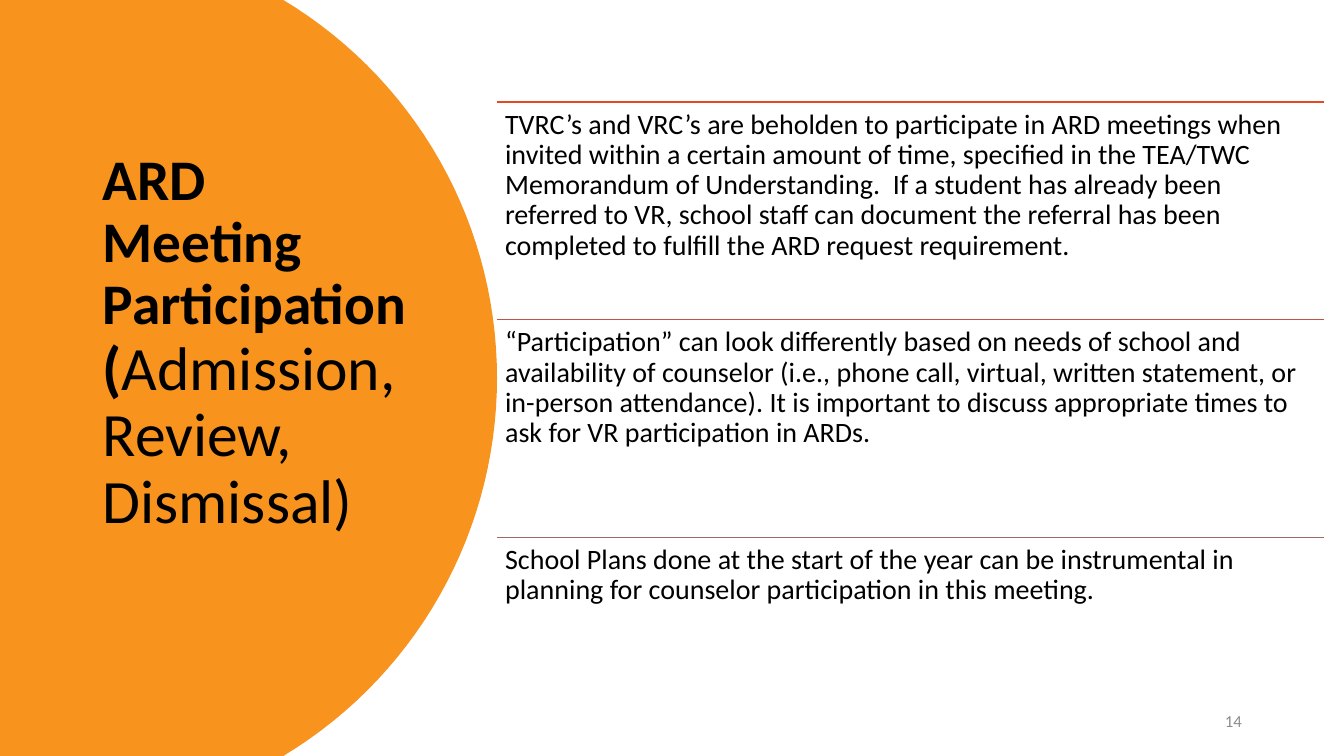
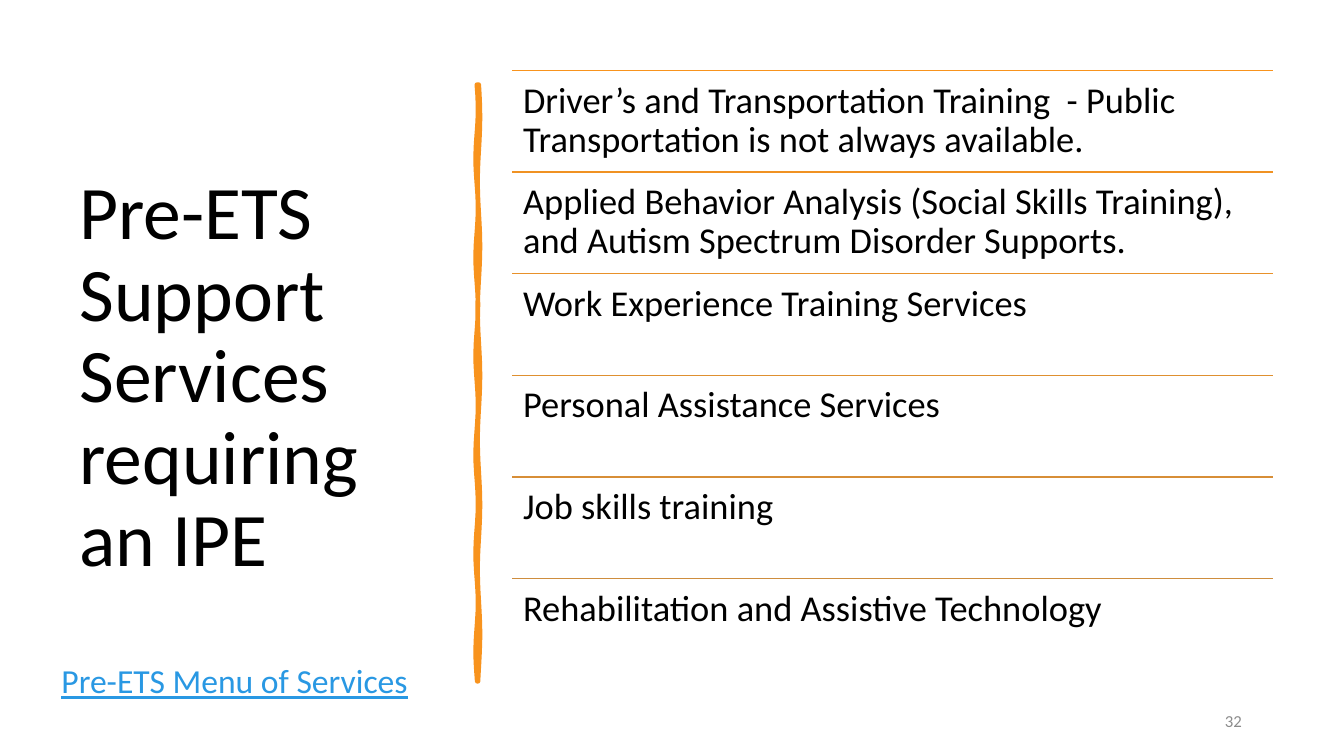
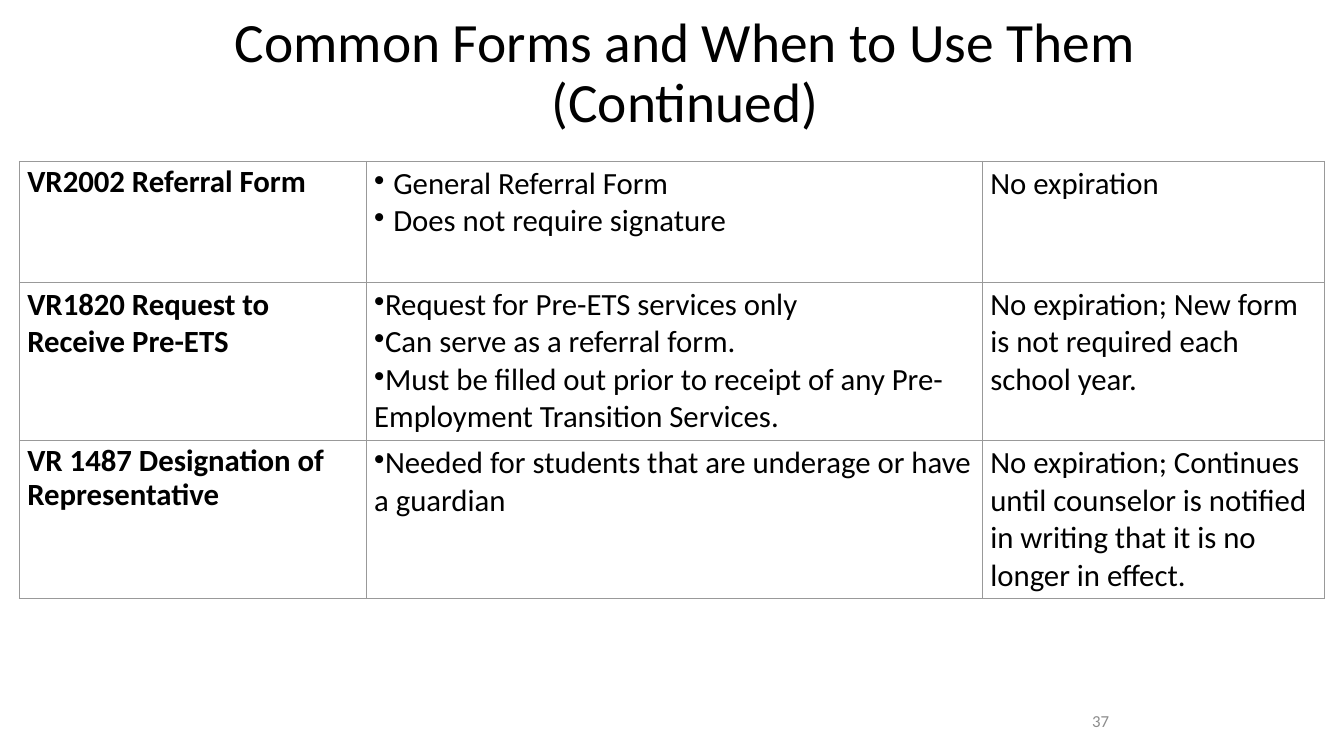
from dataclasses import dataclass
from math import asin, cos, sin

from lxml.etree import SubElement
from pptx import Presentation
from pptx.dml.color import RGBColor
from pptx.enum.shapes import MSO_CONNECTOR as Connector
from pptx.enum.text import MSO_ANCHOR as Anchor, PP_ALIGN as Align
from pptx.oxml import parse_xml
from pptx.oxml.ns import nsdecls, qn
from pptx.util import Inches, Pt

# Shared look
FONT = "Calibri"
BLACK, ORANGE, LINK_BLUE = "000000", "F8931D", "2998E3"
NUMBER_GREY, BORDER_GREY = "8C8C8C", "999999"
SLIDE_WIDTH, SLIDE_HEIGHT = Inches(13.33), Inches(7.5)


@dataclass
class Box:
    """A region, in percent of the slide's width and height."""
    left: float
    top: float
    width: float
    height: float

    def emu(self):
        return (round(SLIDE_WIDTH * self.left / 100), round(SLIDE_HEIGHT * self.top / 100),
                round(SLIDE_WIDTH * self.width / 100), round(SLIDE_HEIGHT * self.height / 100))

    def row(self, index, count):
        height = self.height / count
        return Box(self.left, self.top + index * height, self.width, height)


NUMBER_BOX = Box(70.65, 92.67, 22.5, 5.33)


def color(value):
    return RGBColor.from_string(value)


def style_run(run, size, fill=BLACK, bold=False):
    run.font.name = FONT
    run.font.size = Pt(size)
    run.font.bold = bold
    run.font.color.rgb = color(fill)


def add_text(slide, box, text, size, fill=BLACK, align=Align.LEFT,
             anchor=Anchor.TOP, spacing=1.0, inset=None):
    frame = slide.shapes.add_textbox(*box.emu()).text_frame
    frame.word_wrap = True
    frame.vertical_anchor = anchor
    if inset is not None:
        frame.margin_left = frame.margin_right = Inches(inset)
        frame.margin_top = frame.margin_bottom = Inches(inset)
    paragraph = frame.paragraphs[0]
    paragraph.text = text
    paragraph.alignment = align
    paragraph.line_spacing = spacing
    for run in paragraph.runs:
        style_run(run, size, fill)
    return paragraph


def add_title(slide, box, text, size, align=Align.LEFT):
    return add_text(slide, box, text, size, align=align, anchor=Anchor.MIDDLE, spacing=0.9)


def add_number(slide, number, align=Align.RIGHT):
    add_text(slide, NUMBER_BOX, number, 12, NUMBER_GREY, align, Anchor.MIDDLE)


def add_outline(slide, points, line_width=None):
    points = [(round(x), round(y)) for x, y in points]
    builder = slide.shapes.build_freeform(*points[0])
    builder.add_line_segments(points[1:], close=True)
    shape = builder.convert_to_shape()
    shape.shadow.inherit = False
    shape.fill.solid()
    shape.fill.fore_color.rgb = color(ORANGE)
    if line_width:
        shape.line.color.rgb = color(ORANGE)
        shape.line.width = Pt(line_width)
    else:
        shape.line.fill.background()


def add_round_panel(slide, box, bulge_share=0.43, steps=60):
    """Panel whose right side is an arc of a circle."""
    left, top, width, height = box.emu()
    half, bulge = height / 2, width * bulge_share
    radius = (half ** 2 + bulge ** 2) / (2 * bulge)
    center_x, center_y = left + width - radius, top + half
    reach = asin(half / radius)
    angles = [reach * (2 * step / steps - 1) for step in range(steps + 1)]
    arc = [(center_x + radius * cos(angle), center_y + radius * sin(angle)) for angle in angles]
    add_outline(slide, [(left, top), *arc, (left, top + height)])


def add_brush_stroke(slide, box, steps=60):
    """Upright stroke with slightly uneven sides."""
    left, top, width, height = box.emu()

    def side(x, waves):
        return [(x + width * 0.6 * sin(waves * step / steps), top + height * step / steps)
                for step in range(steps + 1)]

    add_outline(slide, side(left, 38) + side(left + width, 29)[::-1], 3.25)


def add_ruled_list(slide, box, items, size, inset):
    """Equal rows, each a coloured rule with text below it."""
    for index, (rule_color, text) in enumerate(items):
        row = box.row(index, len(items))
        left, top, width, _ = row.emu()
        rule = slide.shapes.add_connector(Connector.STRAIGHT, left, top, left + width, top)
        rule.line.color.rgb = color(rule_color)
        rule.line.width = Pt(1)
        SubElement(rule._element.spPr, qn("a:effectLst"))
        add_text(slide, row, text, size, spacing=0.9, inset=inset)


def set_borders(cell):
    properties = cell._tc.get_or_add_tcPr()
    for index, side in enumerate(("lnL", "lnR", "lnT", "lnB")):
        properties.insert(index, parse_xml(
            f'<a:{side} {nsdecls("a")} w="9525"><a:solidFill>'
            f'<a:srgbClr val="{BORDER_GREY}"/></a:solidFill></a:{side}>'))


def set_bullet(paragraph, indent):
    properties = paragraph._p.get_or_add_pPr()
    properties.set("marL", str(Inches(indent)))
    properties.set("indent", str(-Inches(indent)))
    SubElement(properties, qn("a:buChar")).set("char", "•")


def fill_cell(cell, text, bold=False, tight=False, bullet_indent=None):
    cell.fill.background()
    set_borders(cell)
    cell.margin_left = cell.margin_right = Inches(0.08)
    cell.margin_top = cell.margin_bottom = Inches(0.04)
    cell.text_frame.text = text
    for paragraph in cell.text_frame.paragraphs:
        if tight:
            paragraph.line_spacing = 0.9
            paragraph.space_before = Pt(10)
        if bullet_indent is not None:
            set_bullet(paragraph, bullet_indent)
        for run in paragraph.runs:
            style_run(run, 22, bold=bold)


def add_forms_table(slide, box, forms, column_shares, row_shares):
    left, top, width, height = box.emu()
    table = slide.shapes.add_table(len(forms), len(column_shares), left, top, width, height).table
    table.first_row = table.horz_banding = False
    for column, share in zip(table.columns, column_shares):
        column.width = round(width * share / sum(column_shares))
    for row, share in zip(table.rows, row_shares):
        row.height = round(height * share / sum(row_shares))
    for row, (name, tight, indent, uses, expiry) in zip(table.rows, forms):
        name_cell, uses_cell, expiry_cell = row.cells
        fill_cell(name_cell, name, bold=True, tight=tight)
        fill_cell(uses_cell, "\n".join(uses), bullet_indent=indent)
        fill_cell(expiry_cell, expiry)


def build_meeting_slide(slide):
    add_round_panel(slide, Box(0, 0, 36.98, 100))
    # Bold name, then the long form in regular weight
    title = add_title(slide, Box(6.9, 9.33, 24.23, 72.27),
                      "ARD Meeting Participation\v(", 44)
    for run in title.runs:
        run.font.bold = True
    title.runs[0].font.size = Pt(41)
    long_form = title.add_run()
    long_form.text = "Admission, Review, Dismissal)"
    style_run(long_form, 44)
    add_number(slide, "14")
    add_ruled_list(slide, Box(36.98, 13.47, 61.5, 86.4), [
        ("E64823", "TVRC’s and VRC’s are beholden to participate in ARD meetings when invited "
                   "within a certain amount of time, specified in the TEA/TWC Memorandum of "
                   "Understanding.  If a student has already been referred to VR, school staff "
                   "can document the referral has been completed to fulfill the ARD request "
                   "requirement."),
        ("C15246", "“Participation” can look differently based on needs of school and "
                   "availability of counselor (i.e., phone call, virtual, written statement, or "
                   "in-person attendance). It is important to discuss appropriate times to ask "
                   "for VR participation in ARDs."),
        ("9C6A6A", "School Plans done at the start of the year can be instrumental in planning "
                   "for counselor participation in this meeting."),
    ], 20, 0.08)


def build_services_slide(slide):
    add_title(slide, Box(5.18, 9.33, 28.05, 81.47),
              "Pre-ETS Support Services requiring an IPE", 54)
    add_brush_stroke(slide, Box(35.48, 11.2, 0.15, 78.93))
    add_ruled_list(slide, Box(38.1, 9.33, 56.63, 80.67), [
        (ORANGE, "Driver’s and Transportation Training  - Public Transportation is not always "
                 "available."),
        ("F09223", "Applied Behavior Analysis (Social Skills Training), and Autism Spectrum "
                   "Disorder Supports."),
        ("E8912A", "Work Experience Training Services"),
        ("DF9030", "Personal Assistance Services"),
        ("D78E37", "Job skills training"),
        ("CE8D3E", "Rehabilitation and Assistive Technology"),
    ], 26, 0.11)
    menu = add_text(slide, Box(3.83, 86.67, 29.48, 6.67),
                    "Pre-ETS Menu of Services", 24, LINK_BLUE)
    menu.runs[0].font.underline = True
    add_number(slide, "32")


def build_forms_slide(slide):
    add_title(slide, Box(1.95, 4.27, 98.05, 11.2),
              "Common Forms and When to Use Them\v(Continued)", 39.6, Align.CENTER)
    add_number(slide, "37", Align.CENTER)
    # Name, tight spacing, bullet indent, uses, expiry
    add_forms_table(slide, Box(1.43, 21.33, 97.1, 57.9), [
        ("VR2002 Referral Form", True, 0.19,
         ["General Referral Form", "Does not require signature"],
         "No expiration"),
        ("VR1820 Request to Receive Pre-ETS", False, 0,
         ["Request for Pre-ETS services only", "Can serve as a referral form.",
          "Must be filled out prior to receipt of any Pre-Employment Transition Services."],
         "No expiration; New form is not required each school year."),
        ("VR 1487 Designation of Representative", True, 0,
         ["Needed for students that are underage or have a guardian"],
         "No expiration; Continues until counselor is notified in writing that it is no "
         "longer in effect."),
    ], (3.44, 6.11, 3.39), (1.2, 1.57, 1.57))


def main():
    presentation = Presentation()
    presentation.slide_width, presentation.slide_height = SLIDE_WIDTH, SLIDE_HEIGHT
    blank = presentation.slide_layouts[6]
    for build in (build_meeting_slide, build_services_slide, build_forms_slide):
        build(presentation.slides.add_slide(blank))
    presentation.save("out.pptx")


if __name__ == "__main__":
    main()
